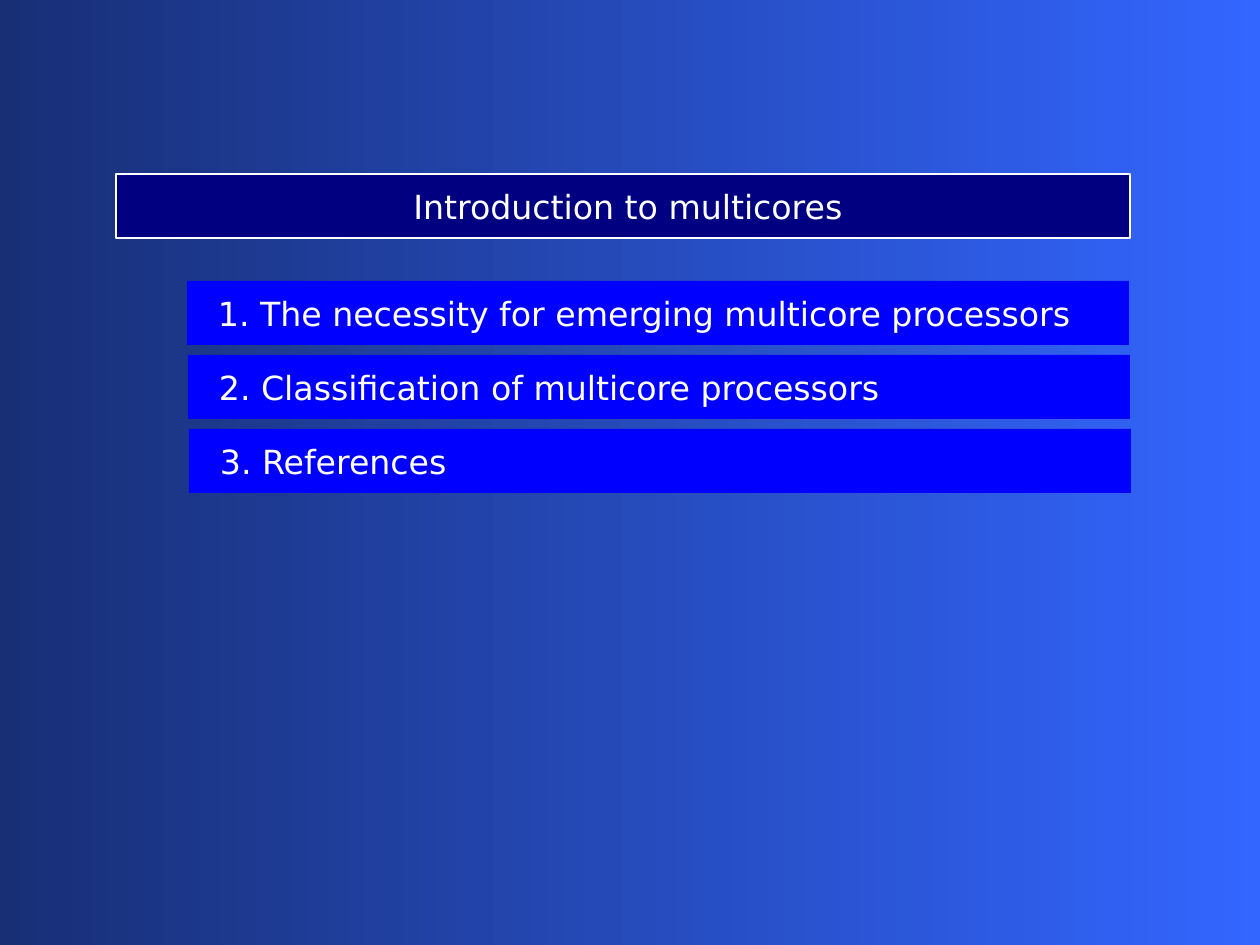
from dataclasses import dataclass

from pptx import Presentation
from pptx.dml.color import RGBColor
from pptx.enum.shapes import MSO_SHAPE
from pptx.enum.text import MSO_ANCHOR, MSO_AUTO_SIZE, PP_ALIGN
from pptx.util import Inches, Pt

ROUNDED = MSO_SHAPE.ROUNDED_RECTANGLE
MIDDLE = MSO_ANCHOR.MIDDLE
NO_FIT = MSO_AUTO_SIZE.NONE
LEFT, CENTER = PP_ALIGN.LEFT, PP_ALIGN.CENTER
PX_PER_INCH = 126


@dataclass(frozen=True)
class Theme:
    bg_start: str = "182F76"
    bg_end: str = "3366FF"
    title_fill: str = "000080"
    item_fill: str = "0000FF"
    text: str = "FFFFFF"
    font: str = "DejaVu Sans"
    size: int = 19
    border: float = 0.75


@dataclass(frozen=True)
class Bar:
    text: str
    left: int
    top: int
    width: int
    height: int
    inset: int


THEME = Theme()
TITLE = Bar("Introduction to multicores", 116, 174, 1014, 64, 23)
TOPICS = (
    "The necessity for emerging multicore processors",
    "Classification of multicore processors",
    "References",
)
ITEMS = [
    Bar(f"{i + 1}. {topic}", 187 + i, 281 + 74 * i, 942, 64, 31)
    for i, topic in enumerate(TOPICS)
]


def px(n: int) -> int:
    return round(Inches(n / PX_PER_INCH))


def rgb(value: str) -> RGBColor:
    return RGBColor.from_string(value)


def apply(target, values: dict) -> None:
    for name, value in values.items():
        setattr(target, name, value)


def paint_background(s) -> None:
    fill = s.background.fill
    fill.gradient()
    fill.gradient_angle = 0
    for stop, color in zip(fill.gradient_stops, (THEME.bg_start, THEME.bg_end)):
        stop.color.rgb = rgb(color)


def format_bar(sp, bar: Bar, color: str, align: PP_ALIGN) -> None:
    apply(sp, {name: px(getattr(bar, name))
               for name in ("left", "top", "width", "height")})
    sp.fill.solid()
    sp.fill.fore_color.rgb = rgb(color)
    tf = sp.text_frame
    apply(tf, {"text": bar.text, "word_wrap": True, "auto_size": NO_FIT,
               "vertical_anchor": MIDDLE, "margin_left": px(bar.inset),
               "margin_right": px(13), "margin_top": 0, "margin_bottom": 0})
    p = tf.paragraphs[0]
    p.alignment = align
    r = p.runs[0]
    apply(r.font, {"name": THEME.font, "size": Pt(THEME.size), "bold": False})
    r.font.color.rgb = rgb(THEME.text)


def add_title(s, bar: Bar) -> None:
    sp = s.shapes.title
    format_bar(sp, bar, THEME.title_fill, CENTER)
    sp.line.color.rgb = rgb(THEME.text)
    sp.line.width = Pt(THEME.border)


def add_item(s, bar: Bar) -> None:
    sp = s.shapes.add_shape(ROUNDED, 0, 0, px(bar.width), px(bar.height))
    sp.adjustments[0] = 0
    sp.shadow.inherit = False
    sp.line.fill.background()
    format_bar(sp, bar, THEME.item_fill, LEFT)


def main() -> None:
    prs = Presentation()
    apply(prs, {"slide_width": Inches(10), "slide_height": Inches(7.5)})
    s = prs.slides.add_slide(prs.slide_layouts.get_by_name("Title Only"))
    paint_background(s)
    add_title(s, TITLE)
    for bar in ITEMS:
        add_item(s, bar)
    prs.save("out.pptx")


if __name__ == "__main__":
    main()
